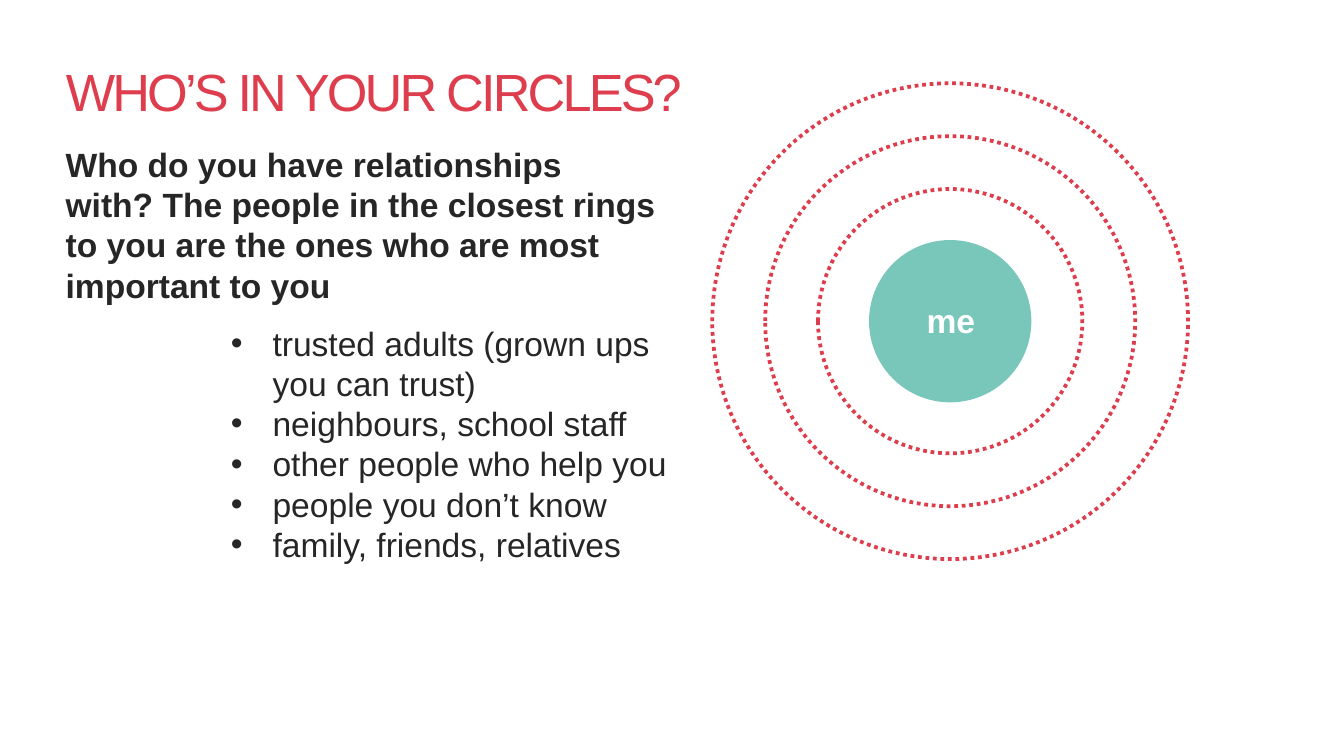
from lxml.etree import SubElement
from pptx import Presentation
from pptx.dml.color import RGBColor
from pptx.enum.dml import MSO_LINE
from pptx.enum.shapes import MSO_SHAPE
from pptx.enum.text import MSO_ANCHOR, MSO_AUTO_SIZE, PP_ALIGN
from pptx.oxml.ns import qn
from pptx.util import Inches, Pt

COLORS = {"red": "DD3D4C", "teal": "79C6BB", "dark": "272626", "white": "FFFFFF"}
FONT = "Arial"
TITLE = "WHO’S IN YOUR CIRCLES?"
QUESTION = (
    "Who do you have relationships with? The people in the closest rings "
    "to you are the ones who are most important to you"
)
PEOPLE = [
    "trusted adults (grown ups you can trust)",
    "neighbours, school staff",
    "other people who help you",
    "people you don’t know",
    "family, friends, relatives",
]
SLIDE_WIDTH = 10
CENTER = (7.07, 2.39)
CORE_DIAMETER = 1.18
RING_COUNT = 3
BULLET_INDENT = 0.31


def color(name):
    return RGBColor.from_string(COLORS[name])


def write_text(shape, lines, size=18, ink="dark", bold=False,
               align=PP_ALIGN.LEFT, bullet=None, spacing=None):
    """Fill a shape with one formatted paragraph per line."""
    frame = shape.text_frame
    frame.word_wrap = True
    frame.auto_size = MSO_AUTO_SIZE.NONE
    frame.vertical_anchor = MSO_ANCHOR.TOP
    for index, line in enumerate(lines):
        paragraph = frame.paragraphs[0] if index == 0 else frame.add_paragraph()
        paragraph.alignment = align
        if bullet:
            properties = paragraph._p.get_or_add_pPr()
            properties.set("marL", str(Inches(BULLET_INDENT)))
            properties.set("indent", str(-Inches(BULLET_INDENT)))
            SubElement(properties, qn("a:buFont"), typeface=FONT)
            SubElement(properties, qn("a:buChar"), char=bullet)
        run = paragraph.add_run()
        run.text = line
        run.font.name = FONT
        run.font.size = Pt(size)
        run.font.bold = bold
        run.font.color.rgb = color(ink)
        if spacing is not None:
            run.font._element.set("spc", str(round(spacing * 100)))


def add_text(slide, box, lines, **text_format):
    shape = slide.shapes.add_textbox(*map(Inches, box))
    write_text(shape, lines, **text_format)


def add_circle(slide, diameter, line, fill=None, dash=None):
    left, top = (middle - diameter / 2 for middle in CENTER)
    shape = slide.shapes.add_shape(
        MSO_SHAPE.OVAL, *map(Inches, (left, top, diameter, diameter)))
    shape.shadow.inherit = False
    if fill:
        shape.fill.solid()
        shape.fill.fore_color.rgb = color(fill)
    else:
        shape.fill.background()
    shape.line.color.rgb = color(line)
    shape.line.width = Pt(2)
    if dash:
        shape.line.dash_style = dash


def main():
    presentation = Presentation()
    presentation.slide_width = Inches(SLIDE_WIDTH)
    presentation.slide_height = Inches(SLIDE_WIDTH * 9 / 16)
    slide = presentation.slides.add_slide(presentation.slide_layouts[5])

    title = slide.shapes.title
    title.left, title.top, title.width, title.height = map(
        Inches, (0.39, 0.39, 4.86, 0.57))
    write_text(title, [TITLE], size=28, ink="red", spacing=-1.5)

    add_text(slide, (1.62, 2.35, 3.77, 1.92), PEOPLE, bullet="•")
    add_text(slide, (0.39, 1.02, 4.61, 1.31), [QUESTION], bold=True)

    for ring in range(RING_COUNT, 0, -1):
        diameter = CORE_DIAMETER * (1 + ring * 2 / RING_COUNT)
        add_circle(slide, diameter, "red", dash=MSO_LINE.ROUND_DOT)
    add_circle(slide, CORE_DIAMETER, "teal", fill="teal")
    add_text(slide, (6.67, 2.18, 0.81, 0.4), ["me"], ink="white", bold=True,
             align=PP_ALIGN.CENTER)

    presentation.save("out.pptx")


if __name__ == "__main__":
    main()
